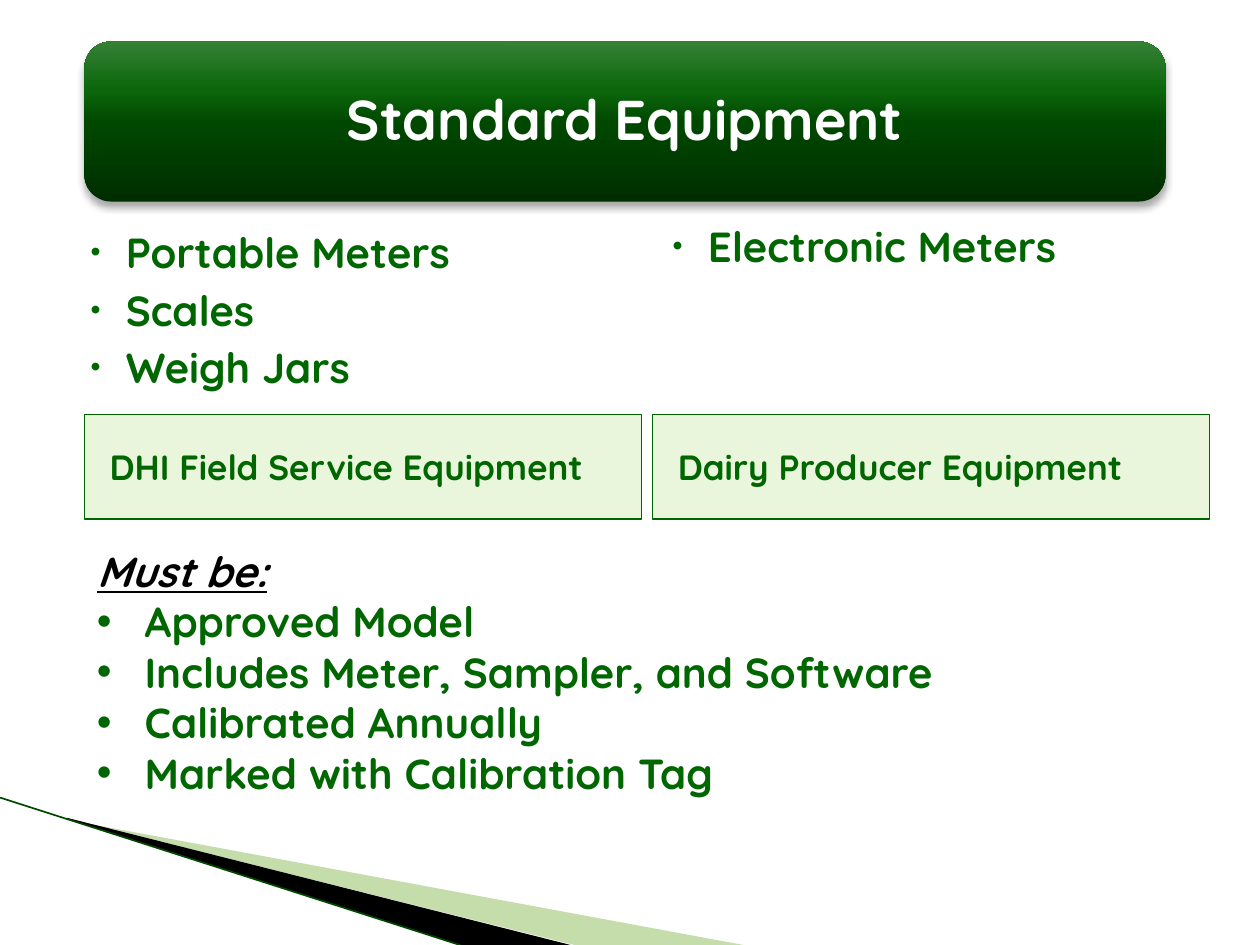
from lxml.etree import SubElement
from pptx import Presentation
from pptx.dml.color import RGBColor
from pptx.enum.shapes import MSO_CONNECTOR, MSO_SHAPE
from pptx.enum.text import MSO_ANCHOR, MSO_AUTO_SIZE, PP_ALIGN
from pptx.oxml.ns import qn
from pptx.util import Emu, Inches, Pt

WIDE, HIGH = Inches(10), Inches(7.5)
COL, ROW = WIDE / 100, HIGH / 75
GREEN, PALE, BLACK, WHITE = "006600", "E9F6DC", "000000", "FFFFFF"
STOPS = [(0, "002D00"), (50, "004800"), (70, "0C670C"), (100, "358135")]
TOOLS = ["Portable Meters", "Scales", "Weigh Jars"]
RULES = ["Approved Model", "Includes Meter, Sampler, and Software",
         "Calibrated Annually", "Marked with Calibration Tag"]


def tint(code):
    return RGBColor.from_string(code)


def spot(x, y):
    return Emu(int(x * COL)), Emu(int(y * ROW))


def place(left, top, wide, high):
    return *spot(left, top), *spot(wide, high)


def node(root, tag, **attrs):
    return SubElement(root, qn(tag), {key: str(val) for key, val in attrs.items()})


def style(para, size, color=GREEN):
    font = para.font
    font.name, font.size, font.bold = "Quicksand", Pt(size), True
    font.color.rgb = tint(color)


def bullet(para, inset, hang, size=100):
    props = para._p.get_or_add_pPr()
    props.set("marL", str(Inches(inset)))
    props.set("indent", str(-Inches(hang)))
    node(node(props, "a:buClr"), "a:srgbClr", val=GREEN)
    node(props, "a:buSzPct", val=size * 1000)
    node(props, "a:buFont", typeface="Arial")
    node(props, "a:buChar", char="•")


def wedge(slide, points, color, alpha=100):
    spots = [spot(x, y) for x, y in points]
    form = slide.shapes.build_freeform(*spots[0])
    form.add_line_segments(spots[1:], close=True)
    shape = form.convert_to_shape()
    shape.shadow.inherit = False
    shape.fill.solid()
    shape.fill.fore_color.rgb = tint(color)
    shape.line.fill.background()
    if alpha < 100:
        node(shape.element.find(".//" + qn("a:srgbClr")), "a:alpha", val=alpha * 1000)


def stroke(slide, start, end, color, width):
    line = slide.shapes.add_connector(MSO_CONNECTOR.STRAIGHT, *spot(*start), *spot(*end))
    line.line.color.rgb = tint(color)
    line.line.width = Pt(width)
    node(line.element.spPr, "a:effectLst")


def banner(slide, words):
    shape = slide.shapes.add_shape(MSO_SHAPE.ROUNDED_RECTANGLE, *place(6.7, 3.3, 85.8, 12.7))
    shape.line.fill.background()
    shape.fill.gradient()
    shape.fill.gradient_angle = 90
    stops = shape.element.find(".//" + qn("a:gsLst"))
    for old in list(stops):
        stops.remove(old)
    for share, code in STOPS:
        node(node(stops, "a:gs", pos=share * 1000), "a:srgbClr", val=code)
    shape.shadow.inherit = False
    glow = node(shape.element.find(".//" + qn("a:effectLst")), "a:outerShdw",
                blurRad=Pt(4), dist=Pt(3), dir=5400000, rotWithShape=0)
    node(node(glow, "a:srgbClr", val=BLACK), "a:alpha", val=35000)

    title = slide.shapes.title
    title.left, title.top, title.width, title.height = place(8.2, 4, 82.8, 11.5)
    shape.element.addnext(title.element)
    frame = title.text_frame
    frame.text = words
    frame.word_wrap = True
    frame.auto_size = MSO_AUTO_SIZE.NONE
    frame.vertical_anchor = MSO_ANCHOR.MIDDLE
    para = frame.paragraphs[0]
    para.alignment = PP_ALIGN.CENTER
    para.line_spacing = 0.9
    style(para, 32, WHITE)


def label(slide, left, words):
    shape = slide.shapes.add_shape(MSO_SHAPE.RECTANGLE, *place(left, 32.9, 44.2, 8.3))
    shape.shadow.inherit = False
    shape.fill.solid()
    shape.fill.fore_color.rgb = tint(PALE)
    shape.line.color.rgb = tint(GREEN)
    shape.line.width = Pt(0.75)
    frame = shape.text_frame
    frame.word_wrap = True
    frame.margin_left = Inches(0.2)
    frame.vertical_anchor = MSO_ANCHOR.MIDDLE
    frame.text = words
    para = frame.paragraphs[0]
    para.alignment = PP_ALIGN.LEFT
    style(para, 20)


def listing(slide, box, items, inset, hang, size=100, gap=0, head=None):
    frame = slide.shapes.add_textbox(*place(*box)).text_frame
    frame.word_wrap = True
    lines = ([head] if head else []) + items
    for rank, words in enumerate(lines):
        para = frame.add_paragraph() if rank else frame.paragraphs[0]
        para.text = words
        if rank and gap:
            para.space_before = Pt(gap)
        if words == head:
            style(para, 24, BLACK)
            para.font.italic = para.font.underline = True
        else:
            bullet(para, inset, hang, size)
            style(para, 24)


def main():
    deck = Presentation()
    deck.slide_width, deck.slide_height = WIDE, HIGH
    slide = deck.slides.add_slide(deck.slide_layouts[5])
    wedge(slide, [(5.5, 65.1), (59, 75), (45.6, 75), (5.5, 65)], "6EAA2E", 40)
    wedge(slide, [(5.3, 64.9), (45.3, 75), (36.6, 75), (5.4, 65)], BLACK)
    stroke(slide, (0, 63.3), (36.5, 75), "004800", 0.95)
    banner(slide, "Standard Equipment")
    label(slide, 6.7, "DHI Field Service Equipment")
    listing(slide, (5, 17.5, 44.2, 14.5), TOOLS, 0.4, 0.28, 68, 4)
    label(slide, 51.8, "Dairy Producer Equipment")
    listing(slide, (51.2, 17, 44.2, 14.5), ["Electronic Meters"], 0.4, 0.28, 68)
    listing(slide, (6.7, 42.8, 89.2, 25.2), RULES, 0.38, 0.38, head="Must be:")
    deck.save("out.pptx")


if __name__ == "__main__":
    main()
